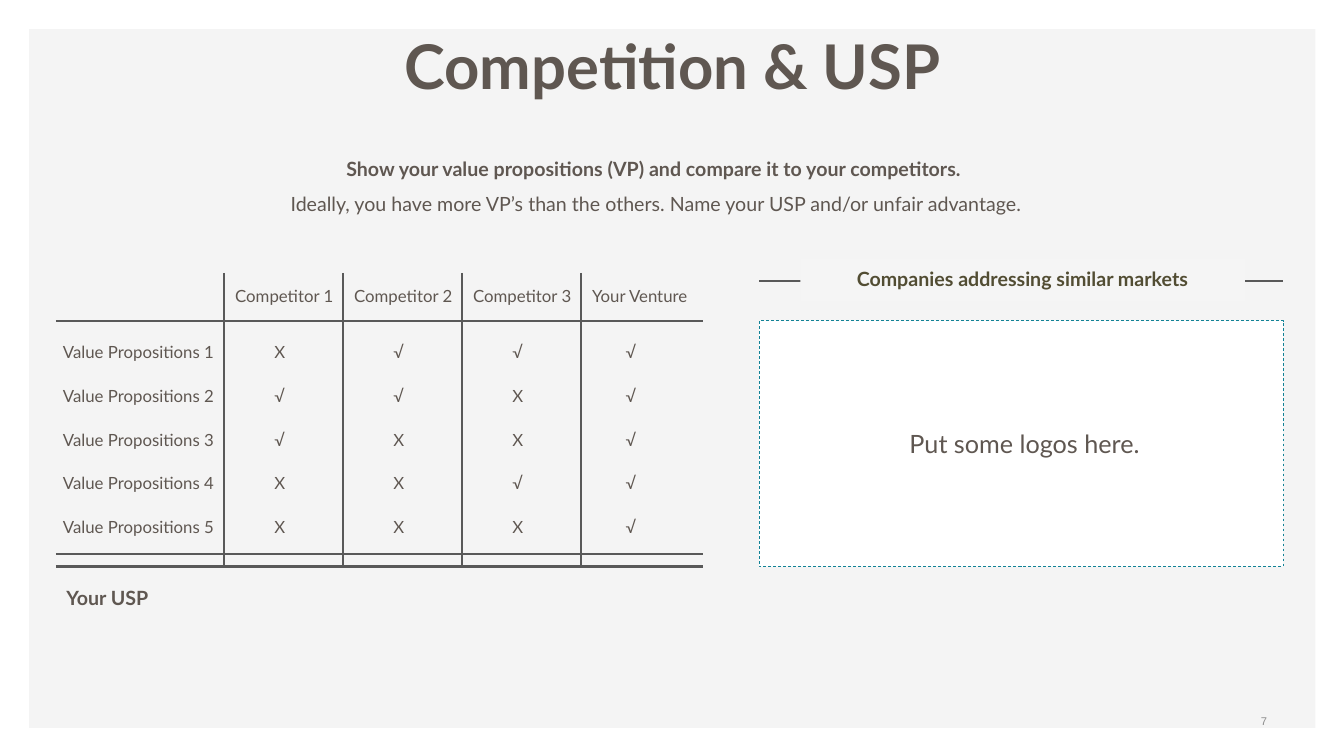
"""Build the "Competition & USP" slide with a comparison table and a logo area."""
from dataclasses import dataclass

from lxml import etree
from pptx import Presentation
from pptx.dml.color import RGBColor as RGB
from pptx.enum.dml import MSO_LINE
from pptx.enum.shapes import MSO_CONNECTOR as CONN, MSO_SHAPE as SHAPE
from pptx.enum.text import MSO_ANCHOR as ANCHOR, PP_ALIGN as ALIGN
from pptx.oxml.ns import qn
from pptx.util import Pt


@dataclass(frozen=True)
class Theme:
    font: str = "Lato"
    number_font: str = "Arial"
    text: RGB = RGB.from_string("5F5751")
    heading: RGB = RGB.from_string("524D33")
    rule: RGB = RGB.from_string("595959")
    number: RGB = RGB.from_string("8C8C8C")
    panel: RGB = RGB.from_string("F2F2F2")
    label: RGB = RGB.from_string("F5F5F5")
    white: RGB = RGB.from_string("FFFFFF")
    accent: RGB = RGB.from_string("118296")
    title_size: int = 44
    logo_size: int = 18
    body_size: int = 14
    table_size: int = 12
    number_size: int = 8


T = Theme()
NO_STYLE = "{2D5ABB26-0587-4C30-8999-92F81FD0307C}"


def add_rect(x, y, w, h, fill):
    sp = s.shapes.add_shape(SHAPE.RECTANGLE, Pt(x), Pt(y), Pt(w), Pt(h))
    sp.shadow.inherit = False
    sp.fill.solid()
    sp.fill.fore_color.rgb = fill
    sp.line.fill.background()
    return sp


def write(tf, text, size, bold=False, align=ALIGN.LEFT, color=T.text,
          font=T.font, anchor=ANCHOR.TOP):
    tf.word_wrap = True
    tf.vertical_anchor = anchor
    p = tf.paragraphs[0]
    p.text = text
    p.alignment = align
    p.font.name, p.font.size, p.font.bold = font, Pt(size), bold
    p.font.color.rgb = color
    return p


prs = Presentation()
prs.slide_width, prs.slide_height = Pt(960), Pt(540)
s = prs.slides.add_slide(prs.slide_layouts[6])

panel = add_rect(20.9, 20.9, 918.7, 499, T.panel)
color = panel.fill._xPr.find(qn("a:solidFill"))[0]
etree.SubElement(color, qn("a:alpha")).set("val", "78000")

frame = add_rect(542.2, 229, 374.4, 175.7, T.white)
frame.line.color.rgb = T.accent
frame.line.width = Pt(0.5)
frame.line.dash_style = MSO_LINE.DASH

title = s.shapes.add_textbox(Pt(216.7), Pt(16.6), Pt(527.8), Pt(60.5))
write(title.text_frame, "Competition & USP", T.title_size, True, ALIGN.CENTER)

intro = s.shapes.add_textbox(Pt(20.9), Pt(100.1), Pt(895.7), Pt(56.9))
p = write(intro.text_frame, "", T.body_size, align=ALIGN.CENTER)
p.line_spacing = 1.5
r = p.add_run()
r.text = "Show your value propositions (VP) and compare it to your competitors. "
r.font.bold = True
p.add_line_break()
r = p.add_run()
r.text = "Ideally, you have more VP’s than the others. Name your USP and/or unfair advantage."

rows = [
    ["", "Competitor 1", "Competitor 2", "Competitor 3", "Your Venture"],
    ["Value Propositions 1", "X", "√", "√", "√"],
    ["Value Propositions 2", "√", "√", "X", "√"],
    ["Value Propositions 3", "√", "X", "X", "√"],
    ["Value Propositions 4", "X", "X", "√", "√"],
    ["Value Propositions 5", "X", "X", "X", "√"],
]
left, top, right, bottom = 40, 195, 502, 404.7
widths = [120, 85, 85, 85, 87]
heights = [40.5] + [31.4] * 5
mark_indents = [5, 36, 36, 36, 32]
header_indent, header_gap = 8, 7

table = s.shapes.add_table(len(rows), len(widths), Pt(left), Pt(top),
                           Pt(sum(widths)), Pt(sum(heights))).table
table.first_row = table.horz_banding = False
table._tbl.tblPr.find(qn("a:tableStyleId")).text = NO_STYLE
for col, width in zip(table.columns, widths):
    col.width = Pt(width)
for i, (row, height) in enumerate(zip(rows, heights)):
    table.rows[i].height = Pt(height)
    for j, text in enumerate(row):
        cell = table.cell(i, j)
        cell.fill.background()
        cell.margin_left = Pt(mark_indents[j] if i else header_indent)
        cell.margin_right = cell.margin_top = Pt(0)
        cell.margin_bottom = Pt(0 if i else header_gap)
        cell.vertical_anchor = ANCHOR.MIDDLE
        p = cell.text_frame.paragraphs[0]
        p.text = text
        p.font.name, p.font.size = T.font, Pt(T.table_size)
        p.font.color.rgb = T.text

rules = [(left, y, right, y) for y in (229, 396, bottom)]
rules += [(x, top, x, bottom) for x in range(160, 416, 85)]
rules.append((542.2, 200.9, 916.6, 200.9))
for ends in rules:
    rule = s.shapes.add_connector(CONN.STRAIGHT, *map(Pt, ends))
    rule.line.color.rgb = T.rule
    rule.line.width = Pt(1.5)
    etree.SubElement(rule._element.spPr, qn("a:effectLst"))

heading = add_rect(571.7, 185, 317.5, 30.2, T.label)
tf = heading.text_frame
tf.margin_left = tf.margin_right = Pt(0)
tf.margin_top = tf.margin_bottom = Pt(5.8)
write(tf, "Companies addressing similar markets", T.body_size, True,
      ALIGN.CENTER, T.heading)

logos = add_rect(558.7, 283.7, 346.3, 65.5, T.white)
write(logos.text_frame, "Put some logos here.", T.logo_size,
      align=ALIGN.CENTER, anchor=ANCHOR.MIDDLE)

usp = s.shapes.add_textbox(Pt(40.3), Pt(414.7), Pt(124.6), Pt(24.5))
write(usp.text_frame, "Your USP", T.body_size, True)

number = s.shapes.add_textbox(Pt(688.3), Pt(500.4), Pt(223.9), Pt(28.8))
write(number.text_frame, "7", T.number_size, align=ALIGN.RIGHT, color=T.number,
      font=T.number_font, anchor=ANCHOR.MIDDLE)

prs.save("out.pptx")
